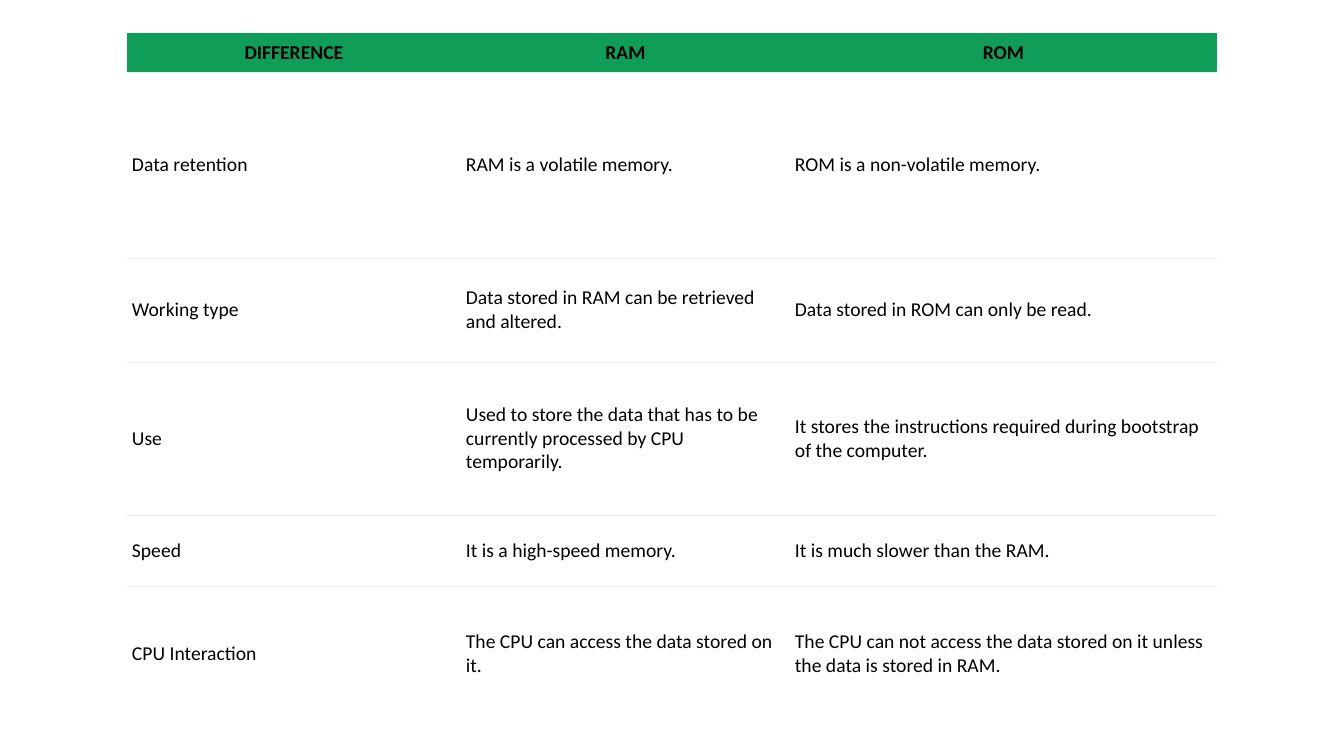
"""Build a slide with a table comparing RAM and ROM."""
from lxml.etree import SubElement
from pptx import Presentation
from pptx.dml.color import RGBColor
from pptx.enum.text import MSO_ANCHOR as Anchor, PP_ALIGN as Align
from pptx.oxml.ns import qn
from pptx.util import Pt

EMU_PER_PX = 914400 / 100.8
COLORS = {"header": "0F9D58", "body": "FFFFFF", "rule": "EDEDED", "text": "000000"}
COLUMN_WIDTHS = [334, 329, 427]
ROW_HEIGHTS = [39, 186, 104, 153, 71, 136]
COMPARISON = [
    ("DIFFERENCE", "RAM", "ROM"),
    ("Data retention", "RAM is a volatile memory.", "ROM is a non-volatile memory."),
    ("Working type", "Data stored in RAM can be retrieved and altered.",
     "Data stored in ROM can only be read."),
    ("Use", "Used to store the data that has to be currently processed by CPU temporarily.",
     "It stores the instructions required during bootstrap of the computer."),
    ("Speed", "It is a high-speed memory.", "It is much slower than the RAM."),
    ("CPU Interaction", "The CPU can access the data stored on it.",
     "The CPU can not access the data stored on it unless the data is stored in RAM."),
]


def px(length):
    return round(length * EMU_PER_PX)


def write_text(frame, text, font="Calibri", size=14, color="text", bold=False, align=Align.LEFT):
    paragraph = frame.paragraphs[0]
    paragraph.alignment = align
    run = paragraph.add_run()
    run.text = text
    run.font.name = font
    run.font.size = Pt(size)
    run.font.bold = bold
    run.font.color.rgb = RGBColor.from_string(COLORS[color])


class SlideBuilder:
    def __init__(self, deck):
        self.slide = deck.slides.add_slide(deck.slide_layouts[6])
        self.rule_width = Pt(0.5)

    def add_border(self, cell, side, visible):
        line = SubElement(cell._tc.get_or_add_tcPr(), qn(f"a:ln{side}"), w=str(self.rule_width))
        if visible:
            fill = SubElement(line, qn("a:solidFill"))
            SubElement(fill, qn("a:srgbClr"), val=COLORS["rule"])
        else:
            SubElement(line, qn("a:noFill"))

    def add_cell(self, cell, text, is_header, ruled_sides):
        for side in "LRTB":
            self.add_border(cell, side, side in ruled_sides)
        cell.fill.solid()
        cell.fill.fore_color.rgb = RGBColor.from_string(COLORS["header" if is_header else "body"])
        cell.vertical_anchor = Anchor.MIDDLE
        cell.margin_left = cell.margin_right = px(3 if is_header else 5)
        cell.margin_top = cell.margin_bottom = px(3 if is_header else 2)
        write_text(cell.text_frame, text, bold=is_header,
                   align=Align.CENTER if is_header else Align.LEFT)

    def add_table(self, left, top, widths, heights, rows):
        table = self.slide.shapes.add_table(
            len(rows), len(widths), px(left), px(top), px(sum(widths)), px(sum(heights))).table
        table.horz_banding = False
        for column, width in zip(table.columns, widths):
            column.width = px(width)
        for index, (row, height, texts) in enumerate(zip(table.rows, heights, rows)):
            row.height = px(height)
            ruled_sides = ("T" if index > 0 else "") + ("B" if index < len(rows) - 1 else "")
            for cell, text in zip(row.cells, texts):
                self.add_cell(cell, text, index == 0, ruled_sides)


def main():
    deck = Presentation()
    deck.slide_width, deck.slide_height = px(1344), px(756)
    SlideBuilder(deck).add_table(127, 33, COLUMN_WIDTHS, ROW_HEIGHTS, COMPARISON)
    deck.save("out.pptx")


if __name__ == "__main__":
    main()
